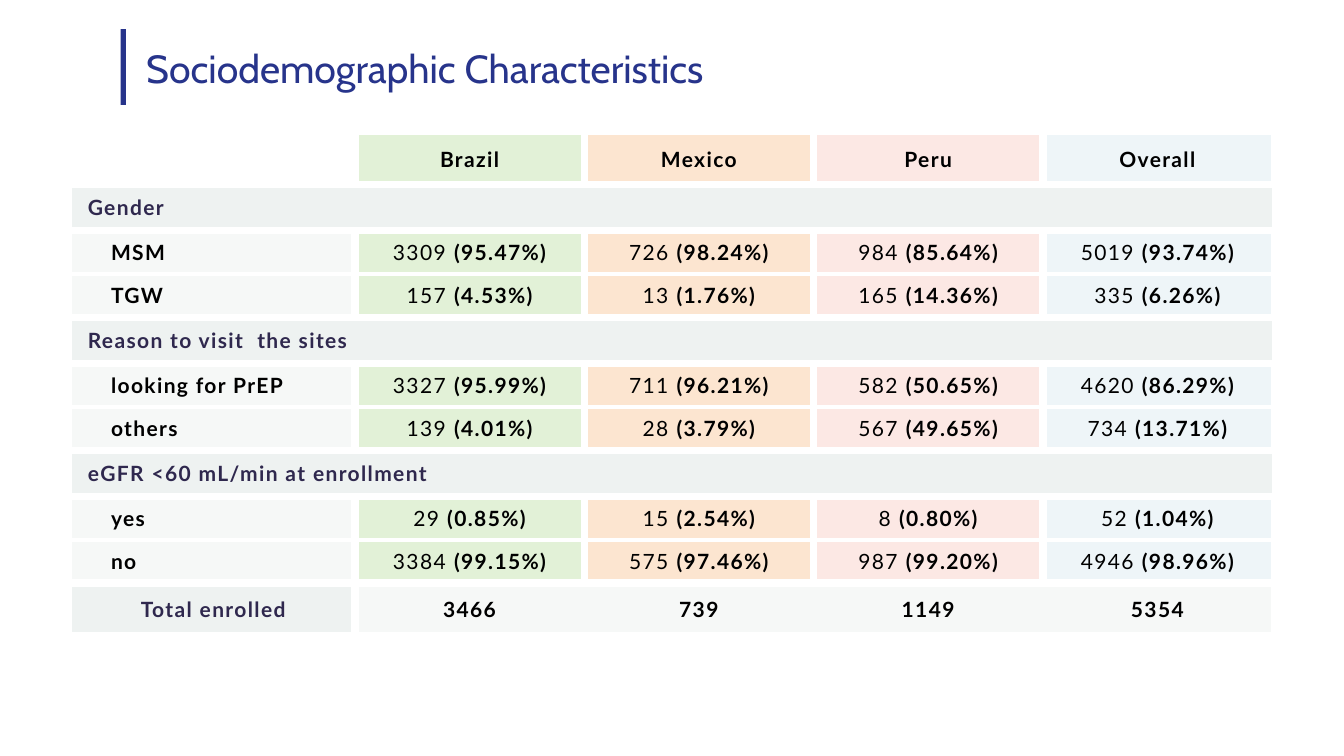
import lxml.etree
import pptx
import pptx.dml.color
import pptx.enum.shapes
import pptx.enum.text
import pptx.oxml.ns
import pptx.util
from dataclasses import dataclass

ALIGN = pptx.enum.text.PP_ALIGN
MIDDLE = pptx.enum.text.MSO_ANCHOR.MIDDLE


@dataclass(frozen=True)
class Theme:
    navy: str = "27348B"
    plum: str = "2F284E"
    black: str = "000000"
    white: str = "FFFFFF"
    band: str = "EEF2F1"
    pale: str = "F6F8F7"
    countries: tuple = ("E2F1D7", "FCE5D0", "FCE8E4", "EEF5F8")
    title_font: str = "Cabin"
    table_font: str = "Lato"
    title_size: int = 28
    table_size: int = 15
    wide_rule: float = 6
    thin_rule: float = 3
    edge_rule: float = 2.25


COUNTRIES = ["Brazil", "Mexico", "Peru", "Overall"]
SECTIONS = [
    ("Gender", [
        ("MSM", ["3309 (95.47%)", "726 (98.24%)", "984 (85.64%)", "5019 (93.74%)"]),
        ("TGW", ["157 (4.53%)", "13 (1.76%)", "165 (14.36%)", "335 (6.26%)"]),
    ]),
    ("Reason to visit  the sites", [
        ("looking for PrEP", ["3327 (95.99%)", "711 (96.21%)", "582 (50.65%)", "4620 (86.29%)"]),
        ("others", ["139 (4.01%)", "28 (3.79%)", "567 (49.65%)", "734 (13.71%)"]),
    ]),
    ("eGFR <60 mL/min at enrollment", [
        ("yes", ["29 (0.85%)", "15 (2.54%)", "8 (0.80%)", "52 (1.04%)"]),
        ("no", ["3384 (99.15%)", "575 (97.46%)", "987 (99.20%)", "4946 (98.96%)"]),
    ]),
]
TOTALS = ["3466", "739", "1149", "5354"]
ROW_HEIGHTS = {"header": 6, "section": 6.13, "first": 5.73, "next": 5.73, "total": 6.93}
COLUMN_WIDTHS = [21.08] + [17.06] * len(COUNTRIES)


def rgb(color):
    return pptx.dml.color.RGBColor.from_string(color)


def add_text(p, text, *, font, size, color, bold=False, spacing=0, align=None):
    p.alignment = align
    r = p.add_run()
    r.text = text
    r.font.name = font
    r.font.size = pptx.util.Pt(size)
    r.font.bold = bold
    r.font.color.rgb = rgb(color)
    if spacing:
        r._r.get_or_add_rPr().set("spc", str(spacing * 100))


class Deck:
    def __init__(self, theme):
        self.theme = theme
        self.prs = pptx.Presentation()
        self.prs.slide_width = pptx.util.Inches(13.33)
        self.prs.slide_height = pptx.util.Inches(7.5)
        self.s = self.prs.slides.add_slide(self.prs.slide_layouts[5])

    def x(self, percent):
        return round(self.prs.slide_width * percent / 100)

    def y(self, percent):
        return round(self.prs.slide_height * percent / 100)

    def box(self, left, top, width, height):
        return self.x(left), self.y(top), self.x(width), self.y(height)

    def title(self, text, *place):
        sp = self.s.shapes.title
        sp.left, sp.top, sp.width, sp.height = self.box(*place)
        tf = sp.text_frame
        tf.auto_size = pptx.enum.text.MSO_AUTO_SIZE.NONE
        tf.vertical_anchor = MIDDLE
        add_text(tf.paragraphs[0], text, font=self.theme.title_font,
                 size=self.theme.title_size, color=self.theme.navy, align=ALIGN.LEFT)

    def bar(self, *place):
        sp = self.s.shapes.add_shape(pptx.enum.shapes.MSO_SHAPE.RECTANGLE, *self.box(*place))
        sp.shadow.inherit = False
        sp.fill.solid()
        sp.fill.fore_color.rgb = rgb(self.theme.navy)
        sp.line.fill.background()

    def table(self, left, top, widths, heights):
        frame = self.s.shapes.add_table(len(heights), len(widths),
                                        *self.box(left, top, sum(widths), sum(heights)))
        table = frame.table
        table.first_row = table.horz_banding = False
        for column, width in zip(table.columns, widths):
            column.width = self.x(width)
        for row, height in zip(table.rows, heights):
            row.height = self.y(height)
        return table

    def borders(self, cell, **widths):
        tcPr = cell._tc.get_or_add_tcPr()
        qn = pptx.oxml.ns.qn
        for side in "LRTB":
            width = widths[side]
            ln = lxml.etree.SubElement(tcPr, qn("a:ln" + side), w=str(int(pptx.util.Pt(width))))
            if width:
                fill = lxml.etree.SubElement(ln, qn("a:solidFill"))
                lxml.etree.SubElement(fill, qn("a:srgbClr"), val=self.theme.white)
            else:
                lxml.etree.SubElement(ln, qn("a:noFill"))

    def fill(self, cell, color):
        if color:
            cell.fill.solid()
            cell.fill.fore_color.rgb = rgb(color)
        else:
            cell.fill.background()

    def cell_text(self, cell, text, color, indent=0.08, pad=0.1, align=ALIGN.CENTER):
        cell.vertical_anchor = MIDDLE
        cell.margin_left = self.x(indent)
        cell.margin_right = self.x(0.75 if pad > 1 else 0.08)
        cell.margin_top = cell.margin_bottom = self.y(pad)
        count, bracket, share = text.partition("(")
        p = cell.text_frame.paragraphs[0]
        for part, bold in ((count, not bracket), (bracket + share, True)):
            if part:
                add_text(p, part, font=self.theme.table_font, size=self.theme.table_size,
                         color=color, bold=bold, spacing=1, align=align)

    def characteristics(self, left, top, rows):
        t = self.theme
        kinds = [kind for kind, _, _ in rows]
        table = self.table(left, top, COLUMN_WIDTHS, [ROW_HEIGHTS[k] for k in kinds])
        rules = [{"header": 0, "next": t.thin_rule}.get(k, t.wide_rule) for k in kinds]
        rules.append(t.wide_rule)
        last = len(COUNTRIES)
        joined = {"section": range(1, last + 1), "total": range(2, last + 1)}
        for i, (kind, label, values) in enumerate(rows):
            sides = [0] + [t.wide_rule] * last + [t.edge_rule]
            for j in joined.get(kind, ()):
                sides[j] = 0
            label_fill = {"header": None, "section": t.band, "total": t.band}.get(kind, t.pale)
            value_fills = {"section": [t.band] * last, "total": [t.pale] * last}
            fills = [label_fill, *value_fills.get(kind, t.countries)]
            for j, color in enumerate(fills):
                cell = table.cell(i, j)
                self.borders(cell, L=sides[j], R=sides[j + 1], T=rules[i], B=rules[i + 1])
                self.fill(cell, color)
            if kind == "section":
                table.cell(i, 0).merge(table.cell(i, last))
                self.cell_text(table.cell(i, 0), label, t.plum, indent=1.2, align=ALIGN.LEFT)
            elif kind == "total":
                self.cell_text(table.cell(i, 0), label, t.plum)
            elif label:
                self.cell_text(table.cell(i, 0), label, t.black, indent=2.93, align=ALIGN.LEFT)
            padding = {"indent": 0.75, "pad": 1.6} if kind == "header" else {}
            for j, value in enumerate(values, 1):
                self.cell_text(table.cell(i, j), value, t.black, **padding)


def main():
    rows = [("header", "", COUNTRIES)]
    for heading, items in SECTIONS:
        rows.append(("section", heading, []))
        for n, (label, values) in enumerate(items):
            rows.append(("next" if n else "first", label, values))
    rows.append(("total", "Total enrolled", TOTALS))

    deck = Deck(Theme())
    deck.bar(8.97, 3.87, 0.4, 10)
    deck.title("Sociodemographic Characteristics", 10.13, 4, 83.72, 10)
    deck.characteristics(5.33, 17.87, rows)
    deck.prs.save("out.pptx")


if __name__ == "__main__":
    main()
